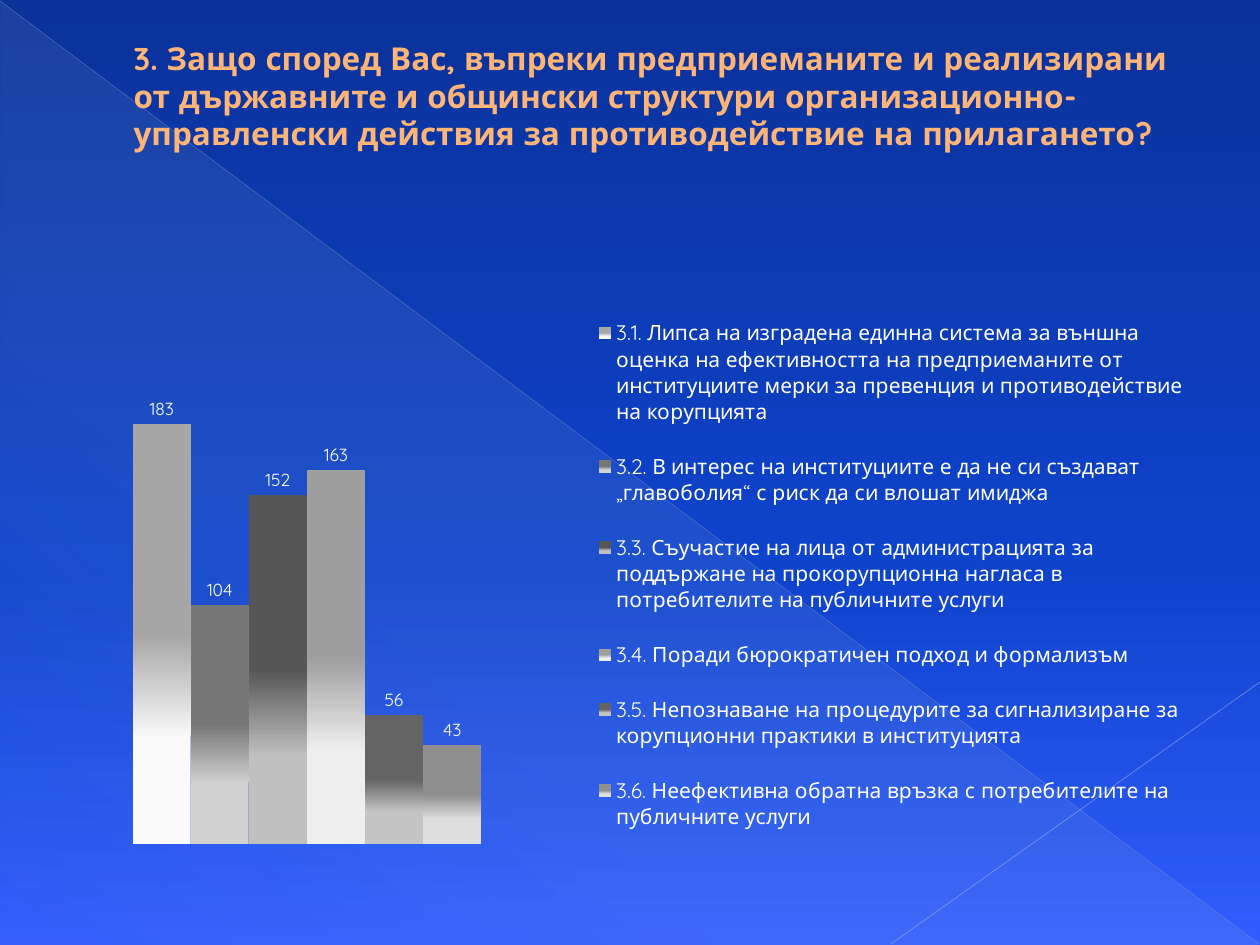
from copy import deepcopy
from dataclasses import dataclass

from lxml.etree import SubElement as Sub
from pptx import Presentation
from pptx.chart.data import CategoryChartData as Data
from pptx.dml.color import RGBColor as RGB
from pptx.enum.chart import XL_CHART_TYPE as Kind, XL_LABEL_POSITION as Spot
from pptx.enum.chart import XL_LEGEND_POSITION as Side
from pptx.enum.shapes import MSO_CONNECTOR as Link, MSO_SHAPE as Form
from pptx.enum.text import MSO_ANCHOR as Anchor, MSO_AUTO_SIZE as Auto, PP_ALIGN as Align
from pptx.oxml.ns import qn
from pptx.util import Pt


@dataclass(frozen=True)
class Theme:
    font: str = "Quicksand"
    title: str = "FFB577"
    edge: str = "AF6F18"
    text: str = "FFFFFF"
    back: tuple = ((0, "0A329A"), (60, "0E43CC"), (100, "315DFC"))
    veil: tuple = ((0, "CCDDEA", 10), (70, "CCDDEA", 8), (100, "CCDDEA", 1))
    head: int = 18
    body: int = 12
    label: int = 10


def put(item, **values):
    for name, value in values.items():
        setattr(item, name, value)


def fade(node, percent):
    Sub(node, qn("a:alpha"), val=str(percent * 1000))


class Deck:
    def __init__(self, theme, wide, high):
        self.theme = theme
        self.show = Presentation()
        put(self.show, slide_width=self.px(wide), slide_height=self.px(high))
        self.slide = self.show.slides.add_slide(self.show.slide_layouts[5])

    def px(self, count):
        return round(count * 914400 / 126)

    def box(self, *sizes):
        return [self.px(size) for size in sizes]

    def blend(self, fill, root, stops, angle):
        fill.gradient()
        fill.gradient_angle = angle
        nodes = root.find(".//" + qn("a:gsLst"))
        for _ in stops[2:]:
            nodes.append(deepcopy(nodes[0]))
        for node, stop in zip(nodes, stops):
            node.set("pos", str(stop[0] * 1000))
            node.remove(node[0])
            color = Sub(node, qn("a:srgbClr"), val=stop[1])
            if len(stop) > 2:
                fade(color, stop[2])

    def back(self):
        self.blend(self.slide.background.fill, self.slide._element, self.theme.back, 270)

    def veil(self, *sizes):
        shape = self.slide.shapes.add_shape(Form.RIGHT_TRIANGLE, *self.box(*sizes))
        shape.shadow.inherit = False
        shape.line.fill.background()
        self.blend(shape.fill, shape._element.spPr, self.theme.veil, 227)

    def line(self, ends, color, width, alpha):
        line = self.slide.shapes.add_connector(Link.STRAIGHT, *self.box(*ends))
        line.line.width = Pt(width)
        line.line.color.rgb = RGB.from_string(color)
        props = line._element.spPr
        fade(props.find(".//" + qn("a:srgbClr")), alpha)
        Sub(props, qn("a:effectLst"))

    def title(self, text, sizes, indent):
        shape = self.slide.shapes.title
        put(shape, **dict(zip(("left", "top", "width", "height"), self.box(*sizes))))
        frame = shape.text_frame
        put(frame, text=text, word_wrap=True, auto_size=Auto.NONE,
            vertical_anchor=Anchor.MIDDLE)
        para = frame.paragraphs[0]
        para.alignment = Align.LEFT
        props = para._p.get_or_add_pPr()
        props.set("marL", str(self.px(indent)))
        props.set("indent", "0")
        font = para.runs[0].font
        put(font, name=self.theme.font, size=Pt(self.theme.head), bold=True)
        font.color.rgb = RGB.from_string(self.theme.title)
        edge = para.runs[0]._r.rPr.makeelement(qn("a:ln"), w=str(Pt(0.5)))
        Sub(Sub(edge, qn("a:solidFill")), qn("a:srgbClr"), val=self.theme.edge)
        para.runs[0]._r.rPr.insert(0, edge)
        self.slide.shapes._spTree.append(shape._element)

    def type(self, font, size):
        put(font, name=self.theme.font, size=Pt(size))
        font.color.rgb = RGB.from_string(self.theme.text)

    def place(self, node, after, inner=False, **parts):
        for old in node.findall(qn("c:layout")):
            node.remove(old)
        layout = node.makeelement(qn("c:layout"))
        if after is None:
            node.insert(0, layout)
        else:
            after.addnext(layout)
        manual = Sub(layout, qn("c:manualLayout"))
        if inner:
            Sub(manual, qn("c:layoutTarget"), val="inner")
        for name in ("xMode", "yMode"):
            Sub(manual, qn("c:" + name), val="edge")
        for name, value in parts.items():
            Sub(manual, qn("c:" + name), val=str(value))

    def chart(self, bars, sizes):
        data = Data()
        data.categories = ["1"]
        for name, value, *_ in bars:
            data.add_series(name, [value])
        chart = self.slide.shapes.add_chart(
            Kind.COLUMN_CLUSTERED, *self.box(*sizes), data).chart
        put(chart, has_title=False, has_legend=True)
        self.type(chart.font, self.theme.label)
        put(chart.category_axis, visible=False, has_major_gridlines=False)
        put(chart.value_axis, visible=False, has_major_gridlines=False,
            minimum_scale=0, maximum_scale=200)
        plot = chart.plots[0]
        put(plot, gap_width=150, overlap=0, vary_by_categories=False)
        for row, (_, _, top, base) in zip(plot.series, bars):
            self.blend(row.format.fill, row._element, ((25, base), (50, top)), 90)
            labels = row.data_labels
            put(labels, show_value=True, position=Spot.OUTSIDE_END)
            self.type(labels.font, self.theme.label)
        legend = chart.legend
        put(legend, position=Side.RIGHT, include_in_layout=False)
        self.type(legend.font, self.theme.body)
        area = chart._chartSpace.find(".//" + qn("c:plotArea"))
        self.place(area, None, True, x=0.023, y=0.199, w=0.384, h=0.728)
        node = legend._element
        self.place(node, node.find(qn("c:legendPos")), x=0.46, y=0.05, w=0.54, h=0.9)


BARS = (
    ("3.1. Липса на изградена единна система за външна оценка на ефективността на "
     "предприеманите от институциите мерки за превенция и противодействие на корупцията",
     183, "A6A6A6", "FAFAFA"),
    ("3.2. В интерес на институциите е да не си създават „главоболия“ с риск да си "
     "влошат имиджа", 104, "777777", "D2D2D2"),
    ("3.3. Съучастие на лица от администрацията за поддържане на прокорупционна "
     "нагласа в потребителите на публичните услуги", 152, "565656", "C0C0C0"),
    ("3.4. Поради бюрократичен подход и формализъм", 163, "9E9E9E", "EEEEEE"),
    ("3.5. Непознаване на процедурите за сигнализиране за корупционни практики в "
     "институцията", 56, "646464", "C4C4C4"),
    ("3.6. Неефективна обратна връзка с потребителите на публичните услуги",
     43, "8F8F8F", "DEDEDE"),
)


def main():
    deck = Deck(Theme(), 1260, 945)
    deck.back()
    deck.veil(1, 2, 1258, 943)
    deck.line((0, 1, 1259, 944), "ADB6DC", 0.39, 35)
    deck.line((1260, 682, 891, 944), "B7BEDF", 0.47, 45)
    deck.title("3. Защо според Вас, въпреки предприеманите и реализирани от държавните "
               "и общински структури организационно-управленски действия за "
               "противодействие на прилагането?", (54, 37, 1134, 117), 67)
    deck.chart(BARS, (63, 260, 1134, 630))
    deck.show.save("out.pptx")


if __name__ == "__main__":
    main()
